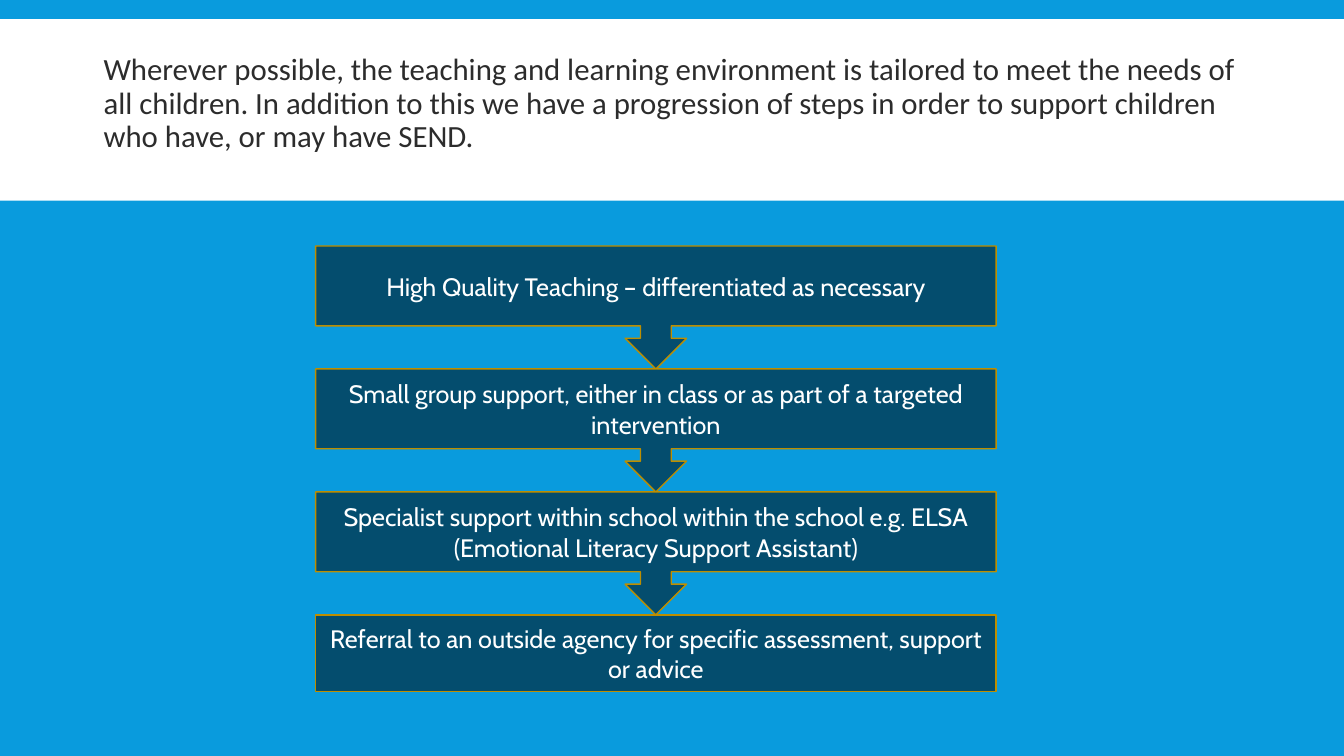
"""Build a slide showing the steps of support for children with SEND."""
import pptx
import pptx.dml.color
import pptx.enum.shapes
import pptx.enum.text
import pptx.util

COLORS = {"background": "099BDD", "band": "FFFFFF", "intro": "2C2C2C",
          "step": "044D6E", "outline": "BD8E00", "label": "FFFFFF"}
STEPS = [
    "High Quality Teaching – differentiated as necessary",
    "Small group support, either in class or as part of a targeted intervention",
    "Specialist support within school within the school e.g. ELSA (Emotional Literacy Support Assistant)",
    "Referral to an outside agency for specific assessment, support or advice",
]
INTRO = ("Wherever possible, the teaching and learning environment is tailored to meet "
         "the needs of all children. In addition to this we have a progression of steps "
         "in order to support children who have, or may have SEND.")
STEP_LEFT, STEP_TOP, STEP_WIDTH = 3.13, 2.44, 6.75
STEP_PITCH, LAST_HEIGHT = 1.22, 0.76

Inches = pptx.util.Inches
shape_types = pptx.enum.shapes.MSO_SHAPE


def color(name):
    return pptx.dml.color.RGBColor.from_string(COLORS[name])


def add_block(kind, left, top, width, height, fill):
    shape = slide.shapes.add_shape(kind, Inches(left), Inches(top), Inches(width), Inches(height))
    shape.shadow.inherit = False
    shape.fill.solid()
    shape.fill.fore_color.rgb = color(fill)
    return shape


presentation = pptx.Presentation()
presentation.slide_width = Inches(13.33)
presentation.slide_height = Inches(7.5)
slide = presentation.slides.add_slide(presentation.slide_layouts[6])
slide.background.fill.solid()
slide.background.fill.fore_color.rgb = color("background")

band = add_block(shape_types.RECTANGLE, 0, 0.19, 13.33, 1.8, "band")
band.line.fill.background()

intro = slide.shapes.add_textbox(Inches(0.93), Inches(0.49), Inches(11.5), Inches(1.3))
intro.text_frame.word_wrap = True
paragraph = intro.text_frame.paragraphs[0]
paragraph.text = INTRO
paragraph.line_spacing = 0.9
paragraph.font.name = "Calibri"
paragraph.font.size = pptx.util.Pt(22)
paragraph.font.color.rgb = color("intro")

for index, label in enumerate(STEPS):
    is_last = index == len(STEPS) - 1
    kind = shape_types.RECTANGLE if is_last else shape_types.DOWN_ARROW_CALLOUT
    height = LAST_HEIGHT if is_last else STEP_PITCH
    step = add_block(kind, STEP_LEFT, STEP_TOP + index * STEP_PITCH, STEP_WIDTH, height, "step")
    step.line.color.rgb = color("outline")
    step.line.width = pptx.util.Pt(1)
    step.text_frame.word_wrap = True
    step.text_frame.vertical_anchor = pptx.enum.text.MSO_ANCHOR.MIDDLE
    paragraph = step.text_frame.paragraphs[0]
    paragraph.text = label
    paragraph.alignment = pptx.enum.text.PP_ALIGN.CENTER
    paragraph.font.name = "Cabin"
    paragraph.font.size = pptx.util.Pt(18)
    paragraph.font.color.rgb = color("label")

presentation.save("out.pptx")
